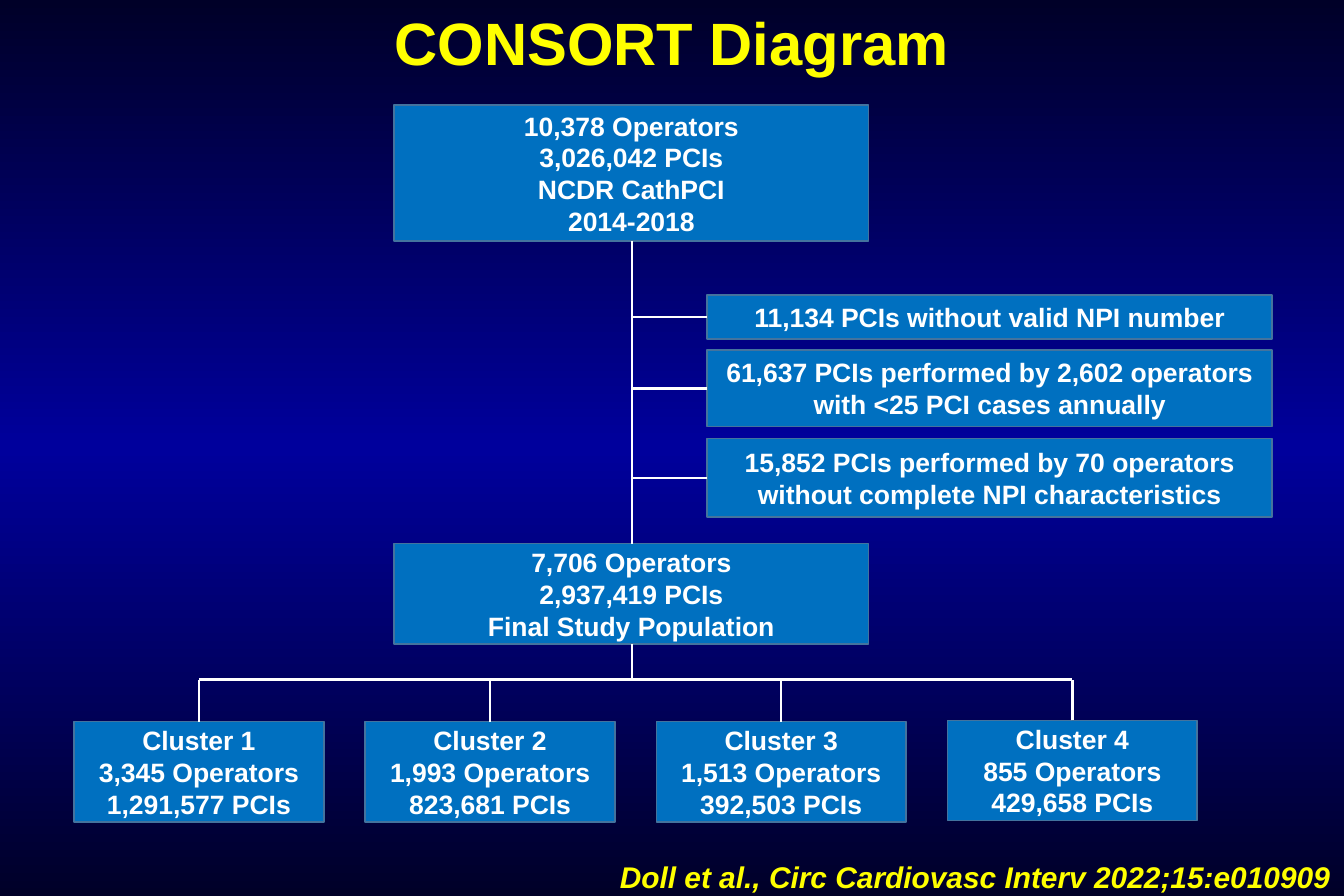
import copy

import pptx
import pptx.dml.color
import pptx.enum.shapes
import pptx.enum.text
import pptx.oxml.ns
import pptx.util
from pptx.util import Inches

COLORS = {
    "edge_blue": "000028",
    "middle_blue": "00009C",
    "box": "0070C0",
    "border": "43739E",
    "white": "FFFFFF",
    "yellow": "FFFF00",
}
CENTER = pptx.enum.text.PP_ALIGN.CENTER
LEFT = pptx.enum.text.PP_ALIGN.LEFT

TRUNK_X = 5.29
POPULATION_LEFT, POPULATION_WIDTH = 3.3, 3.97
EXCLUSION_LEFT, EXCLUSION_WIDTH = 5.92, 4.73
CLUSTER_LEFT, CLUSTER_STEP = 0.62, 2.437
CLUSTER_WIDTH, CLUSTER_HEIGHT = 2.09, 0.84
BRANCH_Y = 5.69

POPULATIONS = [
    (0.88, 1.14, ["10,378 Operators", "3,026,042 PCIs", "NCDR CathPCI", "2014-2018"]),
    (4.55, 0.84, ["7,706 Operators", "2,937,419 PCIs", "Final Study Population"]),
]
EXCLUSIONS = [
    (2.47, 0.37, "11,134 PCIs without valid NPI number"),
    (2.93, 0.64, "61,637 PCIs performed by 2,602 operators with <25 PCI cases annually"),
    (3.67, 0.66, "15,852 PCIs performed by 70 operators without complete NPI characteristics"),
]
CLUSTERS = [
    (6.04, "3,345 Operators", "1,291,577 PCIs"),
    (6.04, "1,993 Operators", "823,681 PCIs"),
    (6.04, "1,513 Operators", "392,503 PCIs"),
    (6.03, "855 Operators", "429,658 PCIs"),
]


def rgb(name):
    return pptx.dml.color.RGBColor.from_string(COLORS[name])


def paint_background(slide):
    fill = slide.background.fill
    fill.gradient()
    fill.gradient_angle = 90
    stop_list = slide.element.xpath(".//a:gsLst")[0]
    stop_list.append(copy.deepcopy(stop_list[-1]))
    shades = [(0, "edge_blue"), (0.5, "middle_blue"), (1, "edge_blue")]
    for stop, (position, color) in zip(fill.gradient_stops, shades):
        stop.position = position
        stop.color.rgb = rgb(color)


def write_lines(frame, lines, size, color, align=CENTER, italic=False):
    frame.word_wrap = True
    font_format = {
        "name": "Arial",
        "size": pptx.util.Pt(size),
        "bold": True,
        "italic": italic,
    }
    for index, line in enumerate(lines):
        paragraph = frame.add_paragraph() if index else frame.paragraphs[0]
        paragraph.alignment = align
        run = paragraph.add_run()
        run.text = line
        for attribute, value in font_format.items():
            setattr(run.font, attribute, value)
        run.font.color.rgb = rgb(color)


def add_label(slide, left, top, width, height, text, size, **style):
    label = slide.shapes.add_textbox(
        Inches(left), Inches(top), Inches(width), Inches(height))
    write_lines(label.text_frame, [text], size, "yellow", **style)


def add_box(slide, left, top, width, height, lines):
    box = slide.shapes.add_shape(
        pptx.enum.shapes.MSO_SHAPE.RECTANGLE,
        Inches(left), Inches(top), Inches(width), Inches(height))
    box.shadow.inherit = False
    box.fill.solid()
    box.fill.fore_color.rgb = rgb("box")
    box.line.color.rgb = rgb("border")
    box.line.width = pptx.util.Pt(1)
    box.text_frame.vertical_anchor = pptx.enum.text.MSO_ANCHOR.MIDDLE
    write_lines(box.text_frame, lines, 16, "white")


def add_line(slide, x1, y1, x2, y2):
    line = slide.shapes.add_connector(
        pptx.enum.shapes.MSO_CONNECTOR.STRAIGHT,
        Inches(x1), Inches(y1), Inches(x2), Inches(y2))
    line.line.color.rgb = rgb("white")
    line.line.width = pptx.util.Pt(1.5)
    properties = line.element.spPr
    properties.append(properties.makeelement(pptx.oxml.ns.qn("a:effectLst"), {}))


def add_trunk(slide):
    for top, height, lines in POPULATIONS:
        add_box(slide, POPULATION_LEFT, top, POPULATION_WIDTH, height, lines)
    (first_top, first_height, _), (final_top, final_height, _) = POPULATIONS
    add_line(slide, TRUNK_X, first_top + first_height, TRUNK_X, final_top)
    add_line(slide, TRUNK_X, final_top + final_height, TRUNK_X, BRANCH_Y)


def add_exclusions(slide):
    for top, height, text in EXCLUSIONS:
        middle = top + height / 2
        add_box(slide, EXCLUSION_LEFT, top, EXCLUSION_WIDTH, height, [text])
        add_line(slide, EXCLUSION_LEFT, middle, TRUNK_X, middle)


def add_clusters(slide):
    centers = []
    for index, (top, operators, procedures) in enumerate(CLUSTERS):
        left = CLUSTER_LEFT + index * CLUSTER_STEP
        center = left + CLUSTER_WIDTH / 2
        centers.append(center)
        add_box(slide, left, top, CLUSTER_WIDTH, CLUSTER_HEIGHT,
                [f"Cluster {index + 1}", operators, procedures])
        add_line(slide, center, top, center, BRANCH_Y)
    add_line(slide, centers[0], BRANCH_Y, centers[-1], BRANCH_Y)


def main():
    deck = pptx.Presentation()
    deck.slide_width = Inches(11.25)
    deck.slide_height = Inches(7.5)
    slide = deck.slides.add_slide(deck.slide_layouts[6])
    paint_background(slide)
    add_label(slide, 0, 0, 11.25, 0.71, "CONSORT Diagram", 36)
    add_label(slide, 5.09, 7.14, 6.16, 0.4,
              "Doll et al., Circ Cardiovasc Interv 2022;15:e010909",
              18, align=LEFT, italic=True)
    add_trunk(slide)
    add_exclusions(slide)
    add_clusters(slide)
    deck.save("out.pptx")


if __name__ == "__main__":
    main()
